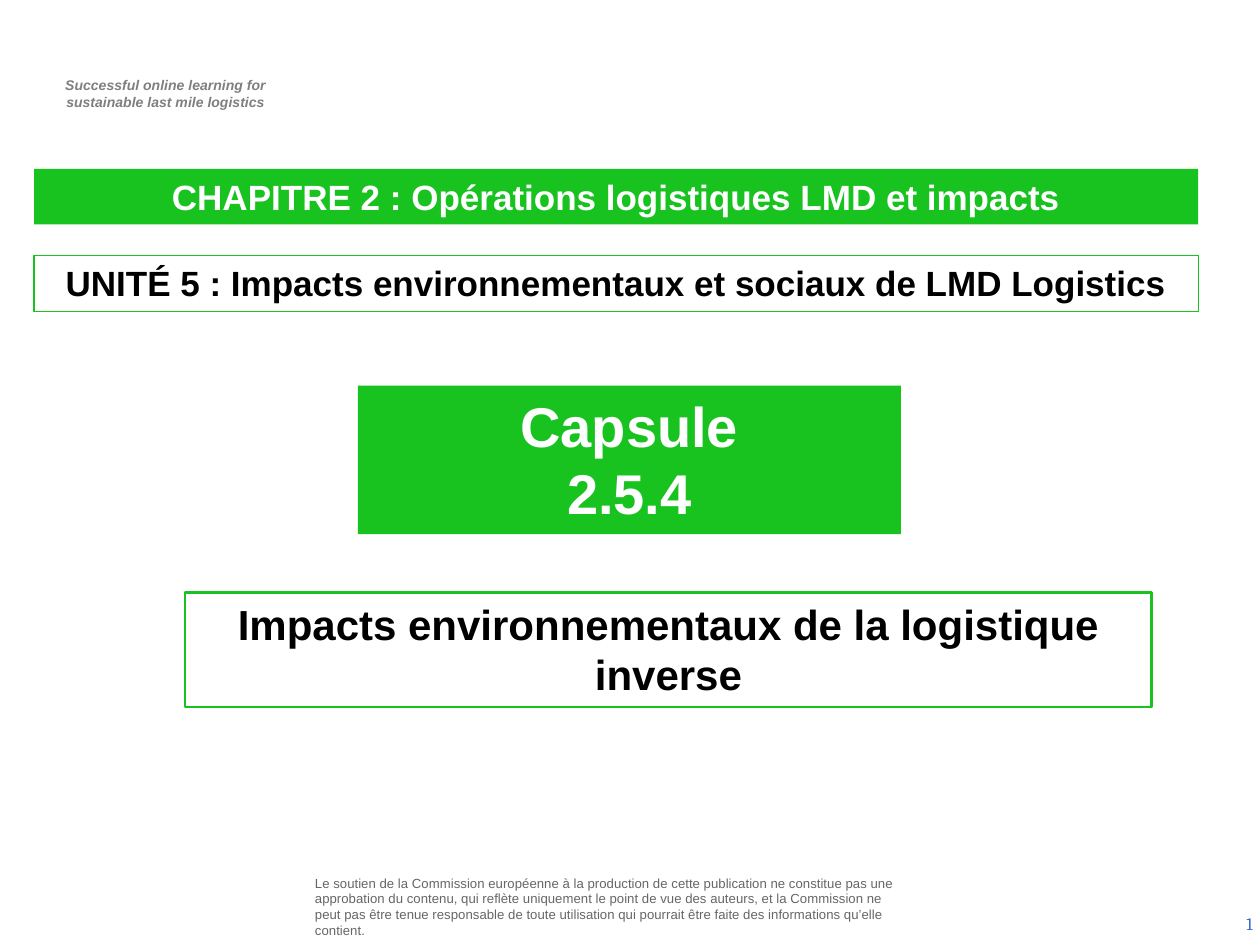
"""Build the title slide of capsule 2.5.4 on reverse logistics."""
from pptx import Presentation
from pptx.dml.color import RGBColor
from pptx.enum.shapes import MSO_SHAPE
from pptx.enum.text import MSO_ANCHOR, MSO_AUTO_SIZE, PP_ALIGN
from pptx.util import Inches, Pt

COLORS = {
    "green": "18C320",
    "white": "FFFFFF",
    "black": "000000",
    "tagline": "7F7F7F",
    "disclaimer": "666666",
    "number": "3366CC",
}

presentation = Presentation()
presentation.slide_width = Inches(10)
presentation.slide_height = Inches(7.5)
slide = presentation.slides.add_slide(presentation.slide_layouts[5])


def place(shape, left, top, width, height):
    """Position a shape in percent of the slide's width and height."""
    shape.left = int(presentation.slide_width * left / 100)
    shape.top = int(presentation.slide_height * top / 100)
    shape.width = int(presentation.slide_width * width / 100)
    shape.height = int(presentation.slide_height * height / 100)


def write(shape, lines, size, color, alignment=PP_ALIGN.CENTER, anchor=MSO_ANCHOR.TOP,
          bold=False, italic=False, font="Arial", margin=None):
    """Fill a shape with one formatted paragraph per line."""
    frame = shape.text_frame
    frame.word_wrap = True
    frame.auto_size = MSO_AUTO_SIZE.NONE
    frame.vertical_anchor = anchor
    if margin is not None:
        frame.margin_left = frame.margin_right = Inches(margin)
        frame.margin_top = frame.margin_bottom = Inches(margin)
    for index, line in enumerate(lines):
        paragraph = frame.add_paragraph() if index else frame.paragraphs[0]
        paragraph.alignment = alignment
        run = paragraph.add_run()
        run.text = line
        run.font.name = font
        run.font.size = Pt(size)
        run.font.bold = bold
        run.font.italic = italic
        run.font.color.rgb = RGBColor.from_string(COLORS[color])


tagline = slide.shapes.add_textbox(0, 0, 0, 0)
place(tagline, 3, 7.47, 20.3, 4.93)
write(tagline, ["Successful online learning for", "sustainable last mile logistics"],
      8, "tagline", bold=True, italic=True)

disclaimer = slide.shapes.add_textbox(0, 0, 0, 0)
place(disclaimer, 24.6, 92.67, 47.3, 6.53)
write(disclaimer, [
    "Le soutien de la Commission européenne à la production de cette publication "
    "ne constitue pas une approbation du contenu, qui reflète uniquement le point "
    "de vue des auteurs, et la Commission ne peut pas être tenue responsable de "
    "toute utilisation qui pourrait être faite des informations qu’elle contient."
], 7.5, "disclaimer", PP_ALIGN.LEFT, MSO_ANCHOR.MIDDLE, margin=0.04)

slide_number = slide.shapes.add_textbox(0, 0, 0, 0)
place(slide_number, 77.1, 95.07, 23.3, 5.33)
write(slide_number, ["1"], 10, "number", PP_ALIGN.RIGHT, MSO_ANCHOR.MIDDLE, font="Cambria")

chapter = slide.shapes.title
place(chapter, 2.7, 17.87, 92.4, 5.87)
chapter.fill.solid()
chapter.fill.fore_color.rgb = RGBColor.from_string(COLORS["green"])
write(chapter, ["CHAPITRE 2 : Opérations logistiques LMD et impacts"], 20, "white", bold=True)

banners = [
    (["UNITÉ 5 : Impacts environnementaux et sociaux de LMD Logistics"],
     (2.7, 27.07, 92.4, 5.87), 20, 0.75),
    (["Capsule", "2.5.4"], (28.4, 40.8, 43.1, 15.73), 32, 0),
    (["Impacts environnementaux de la logistique inverse"],
     (14.7, 62.67, 76.7, 12.13), 24, 1.5),
]
for lines, box, size, outline in banners:
    banner = slide.shapes.add_shape(MSO_SHAPE.RECTANGLE, 0, 0, 0, 0)
    banner.shadow.inherit = False
    place(banner, *box)
    if outline:
        banner.fill.background()
        banner.line.color.rgb = RGBColor.from_string(COLORS["green"])
        banner.line.width = Pt(outline)
    else:
        banner.fill.solid()
        banner.fill.fore_color.rgb = RGBColor.from_string(COLORS["green"])
        banner.line.fill.background()
    write(banner, lines, size, "black" if outline else "white", bold=True)

presentation.save("out.pptx")
